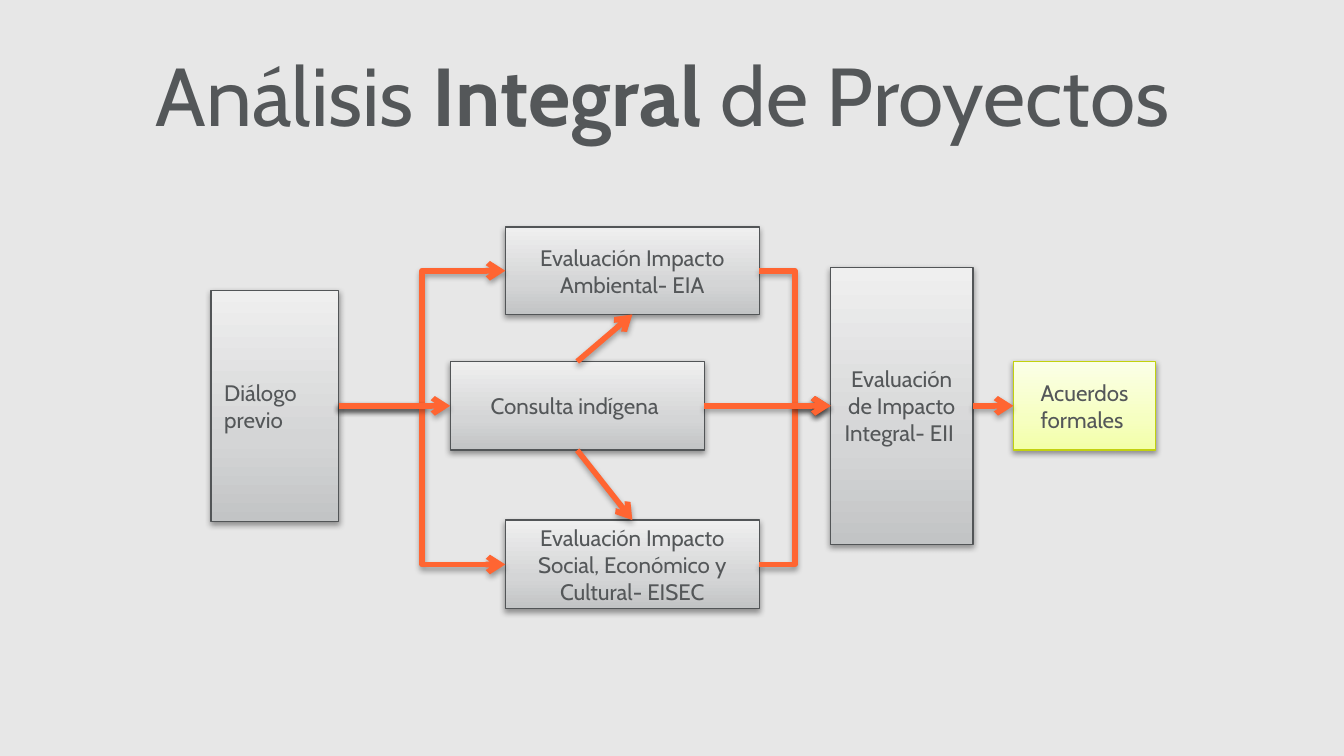
"""Build the slide on the integral analysis of projects as a flow chart."""
from lxml import etree
from pptx import Presentation
from pptx import util as u
from pptx.dml.color import RGBColor
from pptx.enum import shapes, text
from pptx.oxml import parse_xml

NS = 'xmlns:a="http://schemas.openxmlformats.org/drawingml/2006/main"'
GREY = ("C2C4C5", "D4D5D6", "EFEFEF")
LIME = ("F3FFA7", "F6FFC1", "FBFFE7")
FONT = {"name": "Cabin", "size": u.Pt(12)}
TEXT = "545759"
TOP, LEFT, BOTTOM, RIGHT = range(4)


def rgb(value):
    return RGBColor.from_string(value)


def add_shadow(item, distance, alpha):
    item._element.spPr.append(parse_xml(
        f'<a:effectLst {NS}><a:outerShdw blurRad="40000" dist="{distance}" dir="5400000" rotWithShape="0">'
        f'<a:srgbClr val="000000"><a:alpha val="{alpha}"/></a:srgbClr></a:outerShdw></a:effectLst>'))


prs = Presentation()
prs.slide_width = u.Inches(10)
prs.slide_height = u.Inches(10 * 9 / 16)
slide = prs.slides.add_slide(prs.slide_layouts[6])
slide.background.fill.solid()
slide.background.fill.fore_color.rgb = rgb("E7E7E7")

CENTER, START = text.PP_ALIGN.CENTER, text.PP_ALIGN.LEFT
steps = {
    "consulta": ("Consulta indígena ", 3.35, 2.69, 1.89, 0.66, CENTER, GREY, "525557"),
    "dialogo": ("Diálogo previo", 1.57, 2.16, 0.95, 1.72, START, GREY, "525557"),
    "eia": ("Evaluación Impacto Ambiental- EIA", 3.76, 1.69, 1.89, 0.65, CENTER, GREY, "525557"),
    "eisec": ("Evaluación Impacto Social, Económico y Cultural- EISEC",
              3.76, 3.87, 1.89, 0.66, CENTER, GREY, "525557"),
    "eii": ("Evaluación de Impacto Integral- EII ", 6.18, 1.99, 1.06, 2.06, CENTER, GREY, "525557"),
    "acuerdos": ("Acuerdos formales ", 7.54, 2.69, 1.06, 0.66, CENTER, LIME, "C2D10F"),
}
boxes = {}
for step, (label, x, y, width, height, align, shades, outline) in steps.items():
    box = slide.shapes.add_shape(shapes.MSO_SHAPE.RECTANGLE, *map(u.Inches, (x, y, width, height)))
    box.line.color.rgb = rgb(outline)
    box.line.width = u.Pt(0.75)
    stops = "".join(f'<a:gs pos="{position}"><a:srgbClr val="{shade}"/></a:gs>'
                    for position, shade in zip((0, 35000, 100000), shades))
    box._element.spPr.insert(2, parse_xml(
        f'<a:gradFill {NS} rotWithShape="1"><a:gsLst>{stops}</a:gsLst>'
        '<a:lin ang="16200000" scaled="0"/></a:gradFill>'))
    add_shadow(box, 20000, 38000)
    box.text_frame.word_wrap = True
    box.text_frame.vertical_anchor = text.MSO_ANCHOR.MIDDLE
    paragraph = box.text_frame.paragraphs[0]
    paragraph.alignment = align
    run = paragraph.add_run()
    run.text = label
    for key, value in FONT.items():
        setattr(run.font, key, value)
    run.font.color.rgb = rgb(TEXT)
    boxes[step] = box

ELBOW, STRAIGHT = shapes.MSO_CONNECTOR.ELBOW, shapes.MSO_CONNECTOR.STRAIGHT
flows = [
    (ELBOW, "dialogo", RIGHT, "eia", LEFT),
    (ELBOW, "dialogo", RIGHT, "eisec", LEFT),
    (ELBOW, "eisec", RIGHT, "eii", LEFT),
    (ELBOW, "eia", RIGHT, "eii", LEFT),
    (STRAIGHT, "consulta", TOP, "eia", BOTTOM),
    (STRAIGHT, "consulta", BOTTOM, "eisec", TOP),
    (STRAIGHT, "dialogo", RIGHT, "consulta", LEFT),
    (STRAIGHT, "eii", RIGHT, "acuerdos", LEFT),
    (STRAIGHT, "consulta", RIGHT, "eii", LEFT),
]
for kind, source, exit_side, target, entry_side in flows:
    arrow = slide.shapes.add_connector(kind, 0, 0, 0, 0)
    arrow.begin_connect(boxes[source], exit_side)
    arrow.end_connect(boxes[target], entry_side)
    arrow.line.color.rgb = rgb("FF6532")
    arrow.line.width = u.Pt(3)
    etree.SubElement(arrow.line._get_or_add_ln(),
                     "{http://schemas.openxmlformats.org/drawingml/2006/main}tailEnd", type="arrow")
    add_shadow(arrow, 23000, 35000)

title = slide.shapes.add_textbox(*map(u.Inches, (0.5, 0.23, 9, 0.94))).text_frame
title.word_wrap = True
title.vertical_anchor = text.MSO_ANCHOR.MIDDLE
heading = title.paragraphs[0]
heading.alignment = CENTER
for words, bold in (("Análisis ", False), ("Integral", True), (" de Proyectos ", False)):
    run = heading.add_run()
    run.text = words
    for key, value in {**FONT, "size": u.Pt(44), "bold": bold}.items():
        setattr(run.font, key, value)
    run.font.color.rgb = rgb(TEXT)

prs.save("out.pptx")
